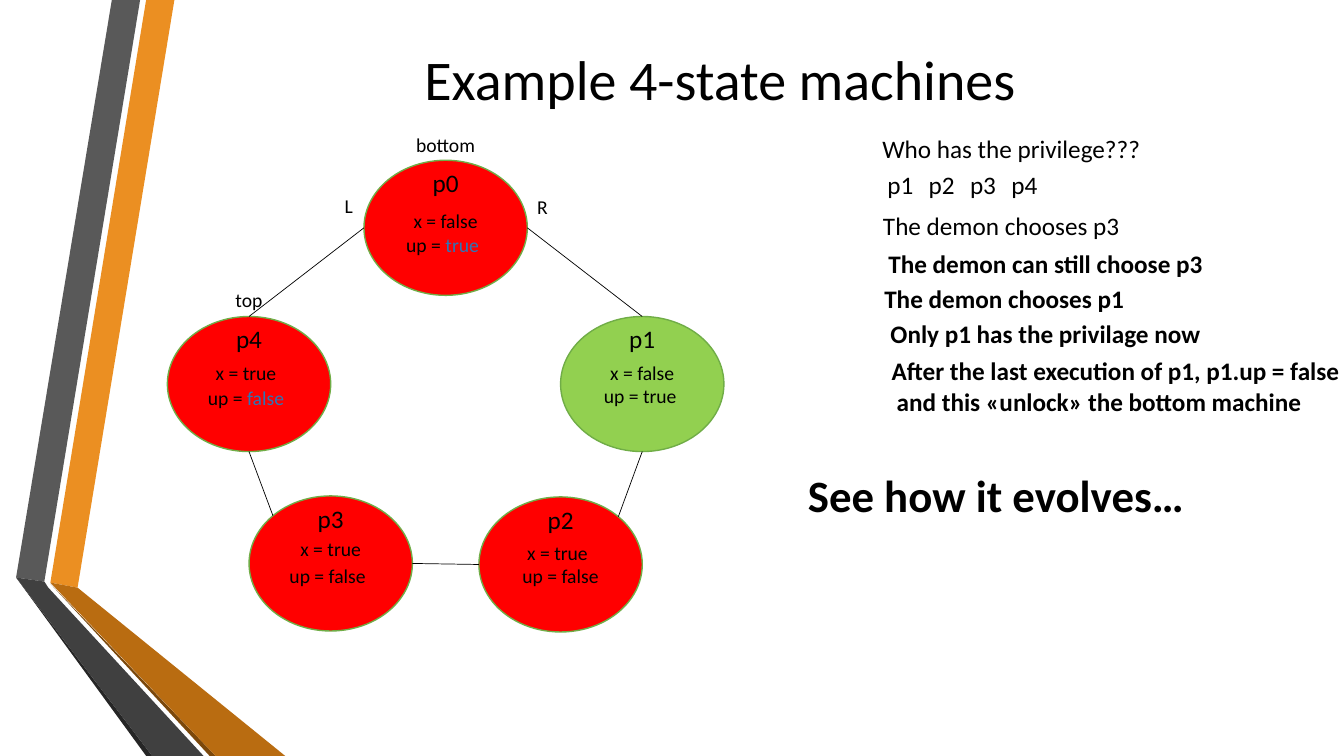
from math import cos, radians, sin

from lxml import etree
from pptx import Presentation
from pptx.dml.color import RGBColor
from pptx.enum import shapes, text
from pptx.oxml.ns import qn
from pptx.util import Inches, Pt

BLACK, RED, GREEN, EDGE, BLUE = "000000", "FF0000", "92D050", "70AD47", "2E75B6"
RADIUS_X, RADIUS_Y = 0.81, 0.67
TITLE = "Example 4-state machines"

RIBBONS = [
    ("EB8F22", [(0.5, 5.78), (0.77, 5.83), (1.73, 0), (1.45, 0)]),
    ("595959", [(1.39, 0), (1.11, 0), (0.16, 5.73), (0.44, 5.77)]),
    ("262626", [(0.16, 5.73), (1.45, 7.5), (1.51, 7.5)]),
    ("7B480B", [(0.5, 5.79), (2.08, 7.5), (2.14, 7.5)]),
    ("B96C11", [(0.5, 5.78), (2.14, 7.5), (2.83, 7.5), (0.77, 5.83)]),
    ("404040", [(2.02, 7.5), (0.48, 5.83), (0.44, 5.77), (0.16, 5.73), (1.51, 7.5)]),
]
# name: centre x, centre y, fill
MACHINES = {
    "p0": (4.42, 2.26, RED),
    "p1": (6.37, 3.81, GREEN),
    "p3": (3.28, 5.59, RED),
    "p2": (5.56, 5.6, RED),
    "p4": (2.47, 3.81, RED),
}
# machine and angle (clockwise from the right) at each end
LINKS = [
    ("p4", 270, "p0", 180),
    ("p0", 0, "p1", 270),
    ("p4", 90, "p3", 225),
    ("p1", 90, "p2", 315),
    ("p3", 0, "p2", 180),
]
# text, blue ending, centre x, top
STATES = [
    ("x = false", "", 4.42, 2.02),
    ("up = ", "true", 4.39, 2.26),
    ("x = false", "", 6.37, 3.53),
    ("up = true", "", 6.35, 3.76),
    ("x = true", "", 5.53, 5.32),
    ("up = false", "", 5.56, 5.55),
    ("x = true", "", 3.28, 5.28),
    ("up = false", "", 3.25, 5.55),
    ("x = true", "", 2.44, 3.53),
    ("up = ", "false", 2.44, 3.78),
    ("bottom", "", 4.42, 1.27),
    ("top", "", 2.47, 2.81),
    ("L", "", 3.46, 1.87),
    ("R", "", 5.38, 1.88),
]
PRIVILEGED = ["p1", "p2", "p3", "p4"]
# text, centre x, top, width, size, bold
NOTES = [
    ("Who has the privilege???", 10.03, 1.27, 2.79, 18, False),
    ("The demon chooses p3", 9.93, 2.04, 3.07, 18, False),
    ("The demon can still choose p3", 10.37, 2.41, 3.95, 18, True),
    ("The demon chooses p1", 9.96, 2.76, 3.95, 18, True),
    ("Only p1 has the privilage now", 10.37, 3.11, 3.3, 18, True),
    ("After the last execution of p1, p1.up = false\n"
     "and this «unlock» the bottom machine", 11.06, 3.48, 4.69, 18, True),
    ("See how it evolves…", 9.88, 4.59, 4.27, 32, True),
]


def color(value):
    return RGBColor.from_string(value)


def style(span, size, fill=BLACK, bold=False):
    span.font.name, span.font.size, span.font.bold = "Calibri", Pt(size), bold
    span.font.color.rgb = color(fill)


def add_label(page, words, center, top, width, size, bold=False, ending=""):
    """Add unwrapped text centred on a point, with an optional blue ending."""
    box = page.shapes.add_textbox(Inches(center - width / 2), Inches(top),
                                  Inches(width), Inches(size / 50 + 0.05))
    frame = box.text_frame
    frame.word_wrap = False
    frame.text = words
    for para in frame.paragraphs:
        para.alignment = text.PP_ALIGN.CENTER
        for span in para.runs:
            style(span, size, bold=bold)
    if ending:
        span = frame.paragraphs[0].add_run()
        span.text = ending
        style(span, size, BLUE)
    return frame


def add_ribbon(page, fill, points):
    corners = [(Inches(x), Inches(y)) for x, y in points]
    builder = page.shapes.build_freeform(*corners[0])
    builder.add_line_segments(corners[1:], close=True)
    ribbon = builder.convert_to_shape()
    ribbon.shadow.inherit = False
    ribbon.fill.solid()
    ribbon.fill.fore_color.rgb = color(fill)
    ribbon.line.fill.background()


def add_machine(page, name, x, y, fill):
    oval = page.shapes.add_shape(
        shapes.MSO_SHAPE.OVAL, Inches(x - RADIUS_X), Inches(y - RADIUS_Y),
        Inches(2 * RADIUS_X), Inches(2 * RADIUS_Y))
    oval.shadow.inherit = False
    oval.fill.solid()
    oval.fill.fore_color.rgb = color(fill)
    oval.line.color.rgb = color(EDGE)
    oval.line.width = Pt(1)
    frame = oval.text_frame
    frame.vertical_anchor = text.MSO_ANCHOR.MIDDLE
    frame.margin_top, frame.margin_bottom = 0, Inches(0.9)
    frame.text = name
    frame.paragraphs[0].alignment = text.PP_ALIGN.CENTER
    style(frame.paragraphs[0].runs[0], 18)


def rim_point(name, angle):
    x, y, _ = MACHINES[name]
    turn = radians(angle)
    return Inches(x + RADIUS_X * cos(turn)), Inches(y + RADIUS_Y * sin(turn))


def add_link(page, start, start_angle, end, end_angle):
    link = page.shapes.add_connector(
        shapes.MSO_CONNECTOR.STRAIGHT,
        *rim_point(start, start_angle), *rim_point(end, end_angle))
    link.line.color.rgb = color(BLACK)
    link.line.width = Pt(0.5)
    etree.SubElement(link._element.spPr, qn("a:effectLst"))


def main():
    deck = Presentation()
    deck.slide_width, deck.slide_height = Inches(13.33), Inches(7.5)
    page = deck.slides.add_slide(deck.slide_layouts[5])
    for fill, points in RIBBONS:
        add_ribbon(page, fill, points)

    title = page.shapes.title
    title.left, title.top = Inches(1.66), Inches(0.21)
    title.width, title.height = Inches(10.96), Inches(1.13)
    title.text_frame.text = TITLE
    title.text_frame.vertical_anchor = text.MSO_ANCHOR.MIDDLE
    title.text_frame.paragraphs[0].alignment = text.PP_ALIGN.CENTER
    style(title.text_frame.paragraphs[0].runs[0], 40)

    for name, (x, y, fill) in MACHINES.items():
        add_machine(page, name, x, y, fill)
    for link in LINKS:
        add_link(page, *link)
    for words, ending, center, top in STATES:
        add_label(page, words, center, top, 1, 14, ending=ending)
    for index, name in enumerate(PRIVILEGED):
        add_label(page, name, 8.93 + 0.41 * index, 1.63, 0.58, 18)
    for words, center, top, width, size, bold in NOTES:
        frame = add_label(page, words, center, top, width, size, bold)
        if len(frame.paragraphs) > 1:
            for para, indent in zip(frame.paragraphs, (0.03, 0.08)):
                para.alignment = text.PP_ALIGN.LEFT
                para._p.get_or_add_pPr().set("marL", str(Inches(indent)))
    deck.save("out.pptx")


if __name__ == "__main__":
    main()
